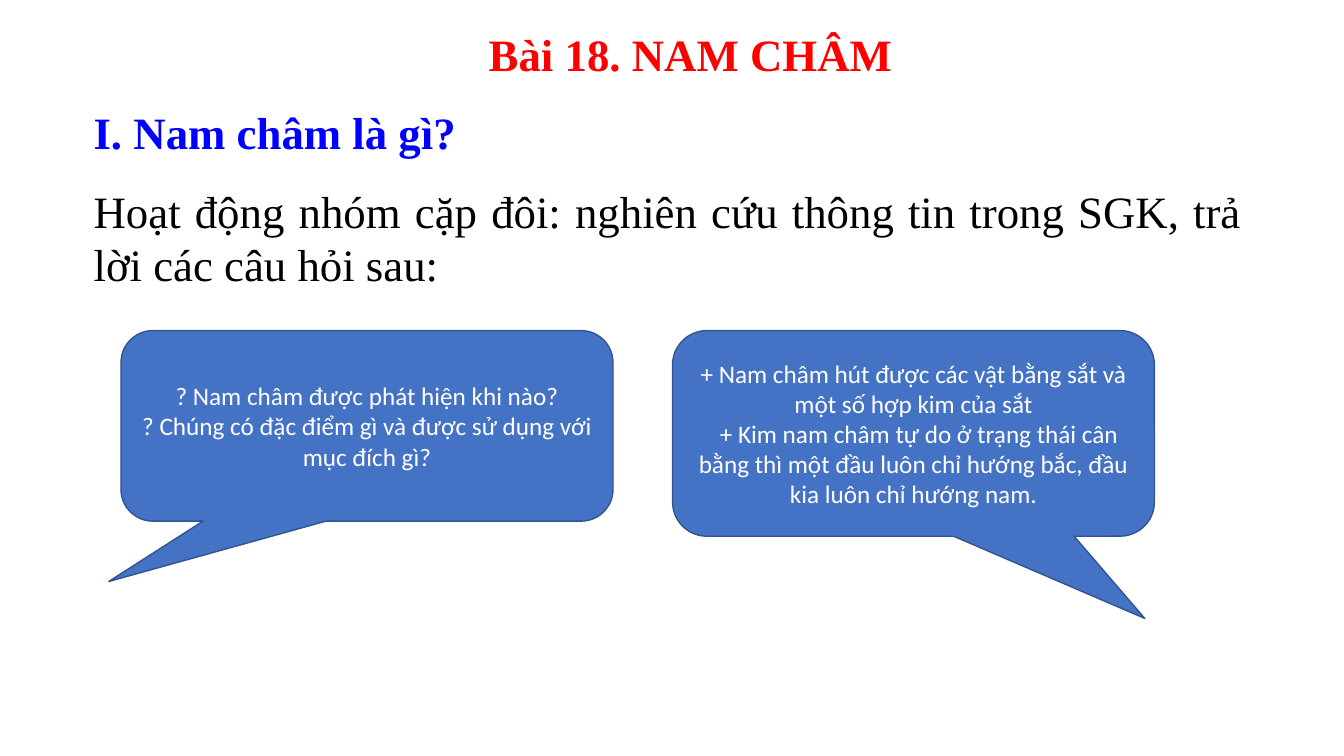
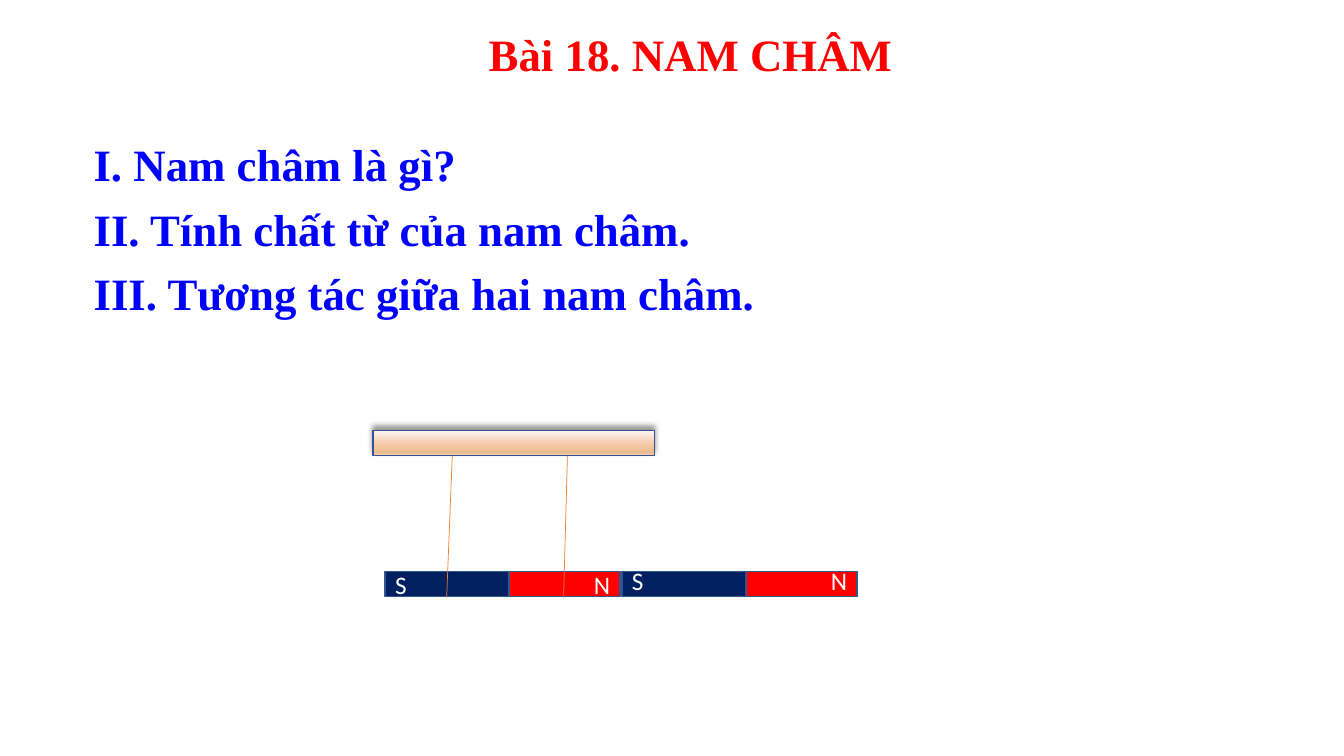
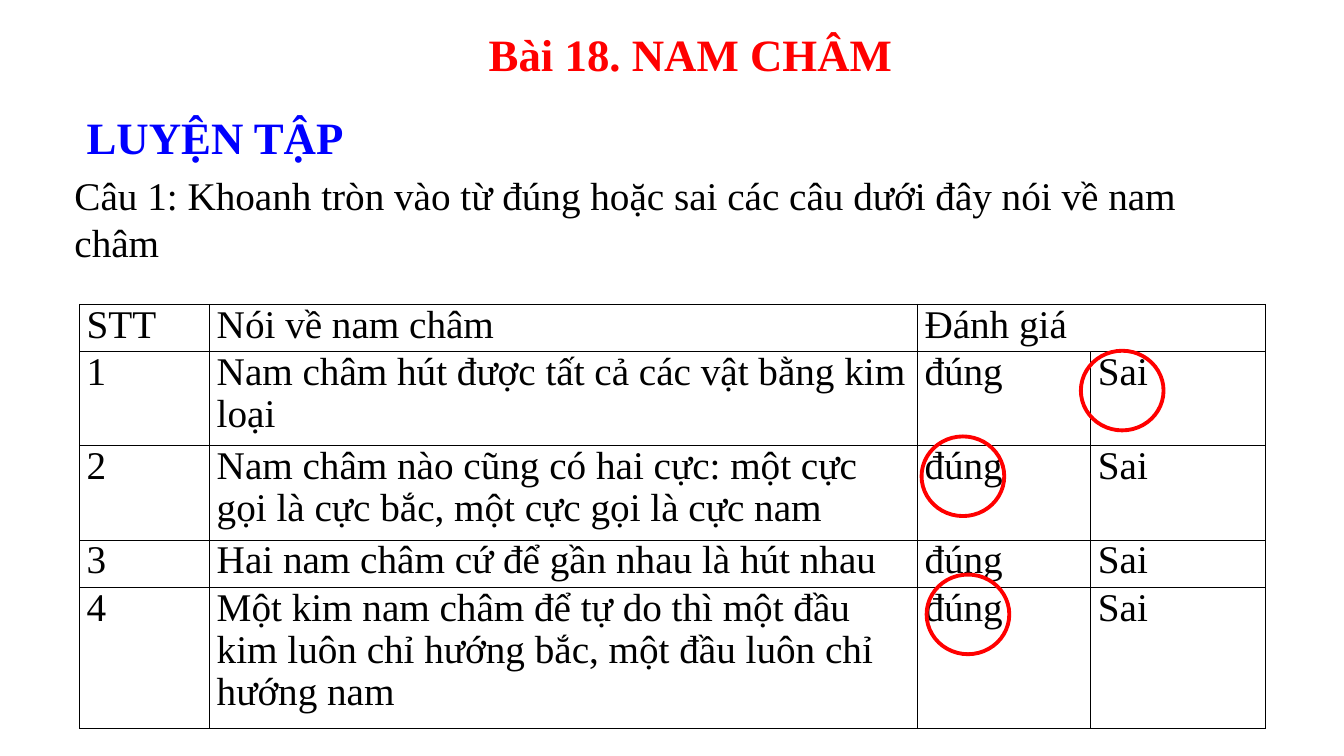
from lxml import etree
from pptx import Presentation
from pptx import util as u
from pptx.dml.color import RGBColor
from pptx.enum import shapes as sh, text as tx
from pptx.oxml import parse_xml
from pptx.oxml.ns import qn

NS = 'xmlns:a="http://schemas.openxmlformats.org/drawingml/2006/main"'
SERIF, SANS = "Times New Roman", "Calibri"
RED, BLUE, BLACK, WHITE = "FF0000", "0000FF", "000000", "FFFFFF"
NAVY, CALL, EDGE, THREAD = "002060", "4472C4", "325491", "ED7D31"
ALIGN = {"l": tx.PP_ALIGN.LEFT, "c": tx.PP_ALIGN.CENTER,
         "r": tx.PP_ALIGN.RIGHT, "j": tx.PP_ALIGN.JUSTIFY}
SHAPE = sh.MSO_SHAPE
MID = tx.MSO_ANCHOR.MIDDLE


def rgb(code):
    return RGBColor.from_string(code)


def write(frame, *lines, size=32, font=SERIF, color=BLACK, bold=False,
          align="l", space=None, indents=()):
    """Fill a text frame, one paragraph per line."""
    frame.word_wrap = True
    for i, line in enumerate(lines):
        para = frame.paragraphs[0] if i == 0 else frame.add_paragraph()
        para.alignment = ALIGN[align]
        para.line_spacing = space
        if i < len(indents):
            para._p.get_or_add_pPr().set("indent", str(u.Inches(indents[i])))
        run = para.add_run()
        run.text = line
        run.font.size = u.Pt(size)
        run.font.name = font
        run.font.bold = bold
        run.font.color.rgb = rgb(color)


def label(slide, at, text, anchor=None, **form):
    frame = slide.shapes.add_textbox(*map(u.Inches, at)).text_frame
    write(frame, text, **form)
    frame.auto_size = tx.MSO_AUTO_SIZE.SHAPE_TO_FIT_TEXT
    if anchor is not None:
        frame.vertical_anchor = anchor


def head(slide, at, text):
    label(slide, at, text, color=BLUE, bold=True, align="j")


def shape(home, kind, at, fill=None, line=EDGE, width=1):
    item = home.add_shape(kind, *map(u.Inches, at))
    item.shadow.inherit = False
    if fill:
        item.fill.solid()
        item.fill.fore_color.rgb = rgb(fill)
    else:
        item.fill.background()
    item.line.color.rgb = rgb(line)
    item.line.width = u.Pt(width)
    return item


def bubble(slide, at, tip, *lines, **form):
    item = shape(slide.shapes, SHAPE.ROUNDED_RECTANGULAR_CALLOUT, at, CALL)
    for i, value in enumerate((*tip, 0.167)):
        item.adjustments[i] = value
    item.text_frame.vertical_anchor = MID
    write(item.text_frame, *lines, size=18, font=SANS, color=WHITE,
          align="c", **form)


def magnet(home, left, lift=0):
    """Draw a bar magnet; lift raises its letters."""
    top, south, north, high = 5.67, 1.23, 1.1, 0.25
    for x, wide, fill, pole, align in (
            (left, south, NAVY, "S", "l"),
            (left + south, north, RED, "N", "r")):
        item = shape(home, SHAPE.RECTANGLE, (x, top, wide, high), fill)
        frame = item.text_frame
        frame.vertical_anchor = MID
        frame.margin_bottom = u.Inches(0.05 + 2 * lift)
        write(frame, pole, size=18, font=SANS, color=WHITE, align=align)


def thread(home, *ends):
    line = home.add_connector(sh.MSO_CONNECTOR.STRAIGHT, *map(u.Inches, ends))
    line.line.color.rgb = rgb(THREAD)
    line.line.width = u.Pt(0.5)
    etree.SubElement(line._element.spPr, qn("a:effectLst"))


def beam(home, at):
    """Draw the support bar with its gradient and upward shadow."""
    props = shape(home, SHAPE.RECTANGLE, at)._element.spPr
    stops = "".join(
        f'<a:gs pos="{pos}000"><a:srgbClr val="{code}"/></a:gs>'
        for pos, code in ((0, "FEF8F5"), (59, "F7C5A2"),
                          (90, "E8BC90"), (100, "FAD8C1")))
    props.replace(props.find(qn("a:noFill")), parse_xml(
        f'<a:gradFill {NS}><a:gsLst>{stops}</a:gsLst>'
        '<a:lin ang="5400000" scaled="0"/></a:gradFill>'))
    props.replace(props.find(qn("a:effectLst")), parse_xml(
        f'<a:effectLst {NS}><a:outerShdw blurRad="{u.Pt(4)}" '
        f'dist="{u.Pt(3)}" dir="16200000" rotWithShape="0">'
        f'<a:srgbClr val="{BLACK}"><a:alpha val="40000"/></a:srgbClr>'
        '</a:outerShdw></a:effectLst>'))


def border(cell):
    props = cell._tc.get_or_add_tcPr()
    for i, side in enumerate("LRTB"):
        props.insert(i, parse_xml(
            f'<a:ln{side} {NS} w="{u.Pt(1)}"><a:solidFill>'
            f'<a:srgbClr val="{BLACK}"/></a:solidFill></a:ln{side}>'))


def grid(slide, left, top, cols, highs, rows):
    table = slide.shapes.add_table(
        len(rows), len(cols), u.Inches(left), u.Inches(top),
        u.Inches(sum(cols)), u.Inches(sum(highs))).table
    table.first_row = table.horz_banding = False
    for col, wide in zip(table.columns, cols):
        col.width = u.Inches(wide)
    for r, (row, high) in enumerate(zip(rows, highs)):
        table.rows[r].height = u.Inches(high)
        for c in range(len(cols)):
            cell = table.cell(r, c)
            cell.fill.background()
            cell.margin_left = cell.margin_right = u.Inches(0.07)
            cell.margin_top = cell.margin_bottom = 0
            border(cell)
            if c < len(row):
                write(cell.text_frame, row[c], size=28, space=0.97)
        if len(row) < len(cols):
            table.cell(r, len(row) - 1).merge(table.cell(r, len(cols) - 1))


def page(deck):
    """Add a blank slide with the lesson title."""
    slide = deck.slides.add_slide(deck.slide_layouts[6])
    label(slide, (2.3, 0.22, 9.1, 0.64), "Bài 18. NAM CHÂM",
          color=RED, bold=True, align="c")
    return slide


def intro(deck):
    slide = page(deck)
    head(slide, (0.83, 0.99, 3.93, 0.64), "I. Nam châm là gì?")
    label(slide, (0.83, 1.77, 11.59, 1.18),
          "Hoạt động nhóm cặp đôi: nghiên cứu thông tin trong SGK, "
          "trả lời các câu hỏi sau:", align="j")
    bubble(slide, (1.2, 3.28, 4.88, 1.89), (-0.525, 0.817),
           "? Nam châm được phát hiện khi nào?",
           "? Chúng có đặc điểm gì và được sử dụng với mục đích gì?")
    bubble(slide, (6.67, 3.28, 4.78, 2.04), (0.48, 0.9),
           "+ Nam châm hút được các vật bằng sắt và một số hợp kim của sắt",
           "+ Kim nam châm tự do ở trạng thái cân bằng thì một đầu luôn "
           "chỉ hướng bắc, đầu kia luôn chỉ hướng nam.",
           indents=(0, 0.11))


def poles(deck):
    slide = page(deck)
    for i, (text, wide) in enumerate((
            ("I. Nam châm là gì?", 4.16),
            ("II. Tính chất từ của nam châm.", 7.69),
            ("III. Tương tác giữa hai nam châm.", 7.69))):
        head(slide, (0.83, 1.31 + 0.64 * i, wide, 0.64), text)
    magnet(slide.shapes.add_group_shape().shapes, 6.17, lift=0.04)
    hung = slide.shapes.add_group_shape().shapes
    magnet(hung, 3.82)
    thread(hung, 4.49, 4.42, 4.43, 5.93)
    thread(hung, 5.63, 4.44, 5.59, 5.93)
    beam(hung, (3.7, 4.27, 2.79, 0.25))


def quiz(deck):
    slide = page(deck)
    head(slide, (0.76, 1.04, 3.08, 0.64), "LUYỆN TẬP")
    claims = (
        "Nam châm hút được tất cả các vật bằng kim loại",
        "Nam châm nào cũng có hai cực: một cực gọi là cực bắc, "
        "một cực gọi là cực nam",
        "Hai nam châm cứ để gần nhau là hút nhau",
        "Một kim nam châm để tự do thì một đầu kim luôn chỉ hướng bắc, "
        "một đầu luôn chỉ hướng nam")
    rows = [("STT", "Nói về nam châm", "Đánh giá")]
    rows += [(str(i), claim, "đúng", "Sai")
             for i, claim in enumerate(claims, 1)]
    grid(slide, 0.79, 3.02, (1.29, 7.02, 1.72, 1.73),
         (0.47, 0.93, 0.94, 0.47, 1.4), rows)
    label(slide, (0.64, 1.65, 12.05, 1.04),
          "Câu 1: Khoanh tròn vào từ đúng hoặc sai các câu dưới đây "
          "nói về nam châm", anchor=MID, size=28)
    for x, y in ((10.72, 3.48), (9.14, 4.33), (9.19, 5.7)):
        shape(slide.shapes, SHAPE.OVAL, (x, y, 0.82, 0.79),
              line=RED, width=2.75)


def main():
    deck = Presentation()
    deck.slide_width, deck.slide_height = u.Inches(13.33), u.Inches(7.5)
    for build in (intro, poles, quiz):
        build(deck)
    deck.save("out.pptx")


if __name__ == "__main__":
    main()
